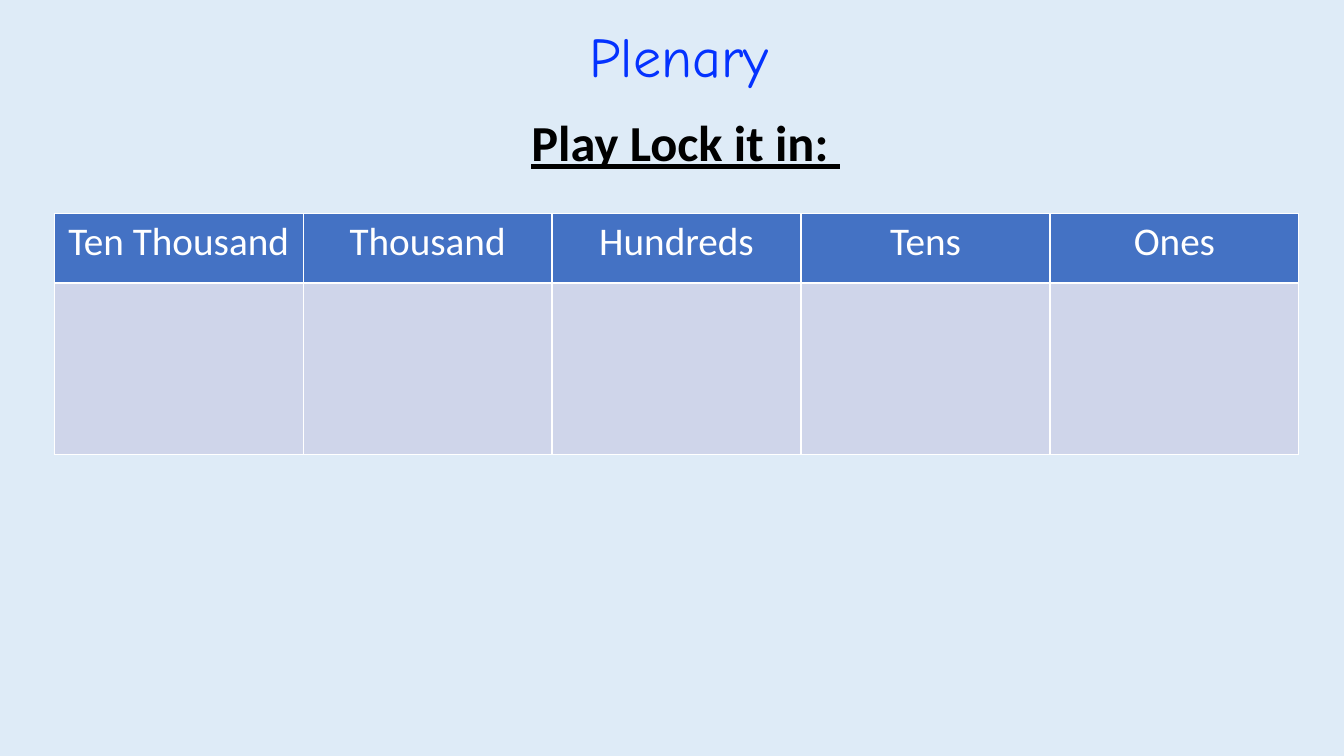
from dataclasses import dataclass

from lxml import etree
from pptx import Presentation
from pptx.dml.color import RGBColor
from pptx.enum import text
from pptx.oxml import ns
from pptx.util import Pt


@dataclass(frozen=True)
class Theme:
    background: str = "DEEBF7"
    title: str = "0432FF"
    body: str = "000000"
    header: str = "4472C4"
    cell: str = "CFD5EA"
    white: str = "FFFFFF"
    title_font: str = "Comic Neue"
    body_font: str = "Calibri"
    title_size: int = 40
    subtitle_size: int = 36
    header_size: int = 28


theme = Theme()


def write(text_frame, words, name, size, color, alignment, bold=False):
    text_frame.text = words
    paragraph = text_frame.paragraphs[0]
    paragraph.alignment = alignment
    font = paragraph.runs[0].font
    font.name, font.size, font.bold = name, Pt(size), bold
    font.color.rgb = RGBColor.from_string(color)
    return font


def style_cell(cell, fill):
    """Give the cell thin white borders and a solid fill."""
    properties = cell._tc.get_or_add_tcPr()
    for side in ("lnL", "lnR", "lnT", "lnB"):
        line = etree.SubElement(properties, ns.qn(f"a:{side}"), w=str(Pt(1)))
        solid = etree.SubElement(line, ns.qn("a:solidFill"))
        etree.SubElement(solid, ns.qn("a:srgbClr"), val=theme.white)
    cell.fill.solid()
    cell.fill.fore_color.rgb = RGBColor.from_string(fill)


presentation = Presentation()
presentation.slide_width, presentation.slide_height = Pt(960), Pt(540)
slide = presentation.slides.add_slide(presentation.slide_layouts[5])
slide.background.fill.solid()
slide.background.fill.fore_color.rgb = RGBColor.from_string(theme.background)

# Title
title = slide.shapes.title
title.left, title.top, title.width, title.height = Pt(414), Pt(11.5), Pt(151.2), Pt(55.4)
title.text_frame.word_wrap = False
title.text_frame.auto_size = text.MSO_AUTO_SIZE.SHAPE_TO_FIT_TEXT
title.text_frame.vertical_anchor = text.MSO_ANCHOR.TOP
write(title.text_frame, "Plenary", theme.title_font, theme.title_size,
      theme.title, text.PP_ALIGN.LEFT)

# Game instruction
instruction = slide.shapes.add_textbox(Pt(51.8), Pt(75.6), Pt(876.2), Pt(51.1))
instruction.text_frame.word_wrap = True
instruction.text_frame.auto_size = text.MSO_AUTO_SIZE.SHAPE_TO_FIT_TEXT
font = write(instruction.text_frame, "Play Lock it in: ", theme.body_font,
             theme.subtitle_size, theme.body, text.PP_ALIGN.CENTER, bold=True)
font.underline = True

# Place value table
places = ["Ten Thousand", "Thousand", "Hundreds", "Tens", "Ones"]
row_heights = [49.7, 122.4]
table = slide.shapes.add_table(len(row_heights), len(places), Pt(38.7), Pt(152.5),
                               Pt(889.2), Pt(sum(row_heights))).table
table.horz_banding = False
for row, height in zip(table.rows, row_heights):
    row.height = Pt(height)
for column, place in enumerate(places):
    header = table.cell(0, column)
    style_cell(header, theme.header)
    write(header.text_frame, place, theme.body_font, theme.header_size,
          theme.white, text.PP_ALIGN.CENTER)
    style_cell(table.cell(1, column), theme.cell)

presentation.save("out.pptx")
